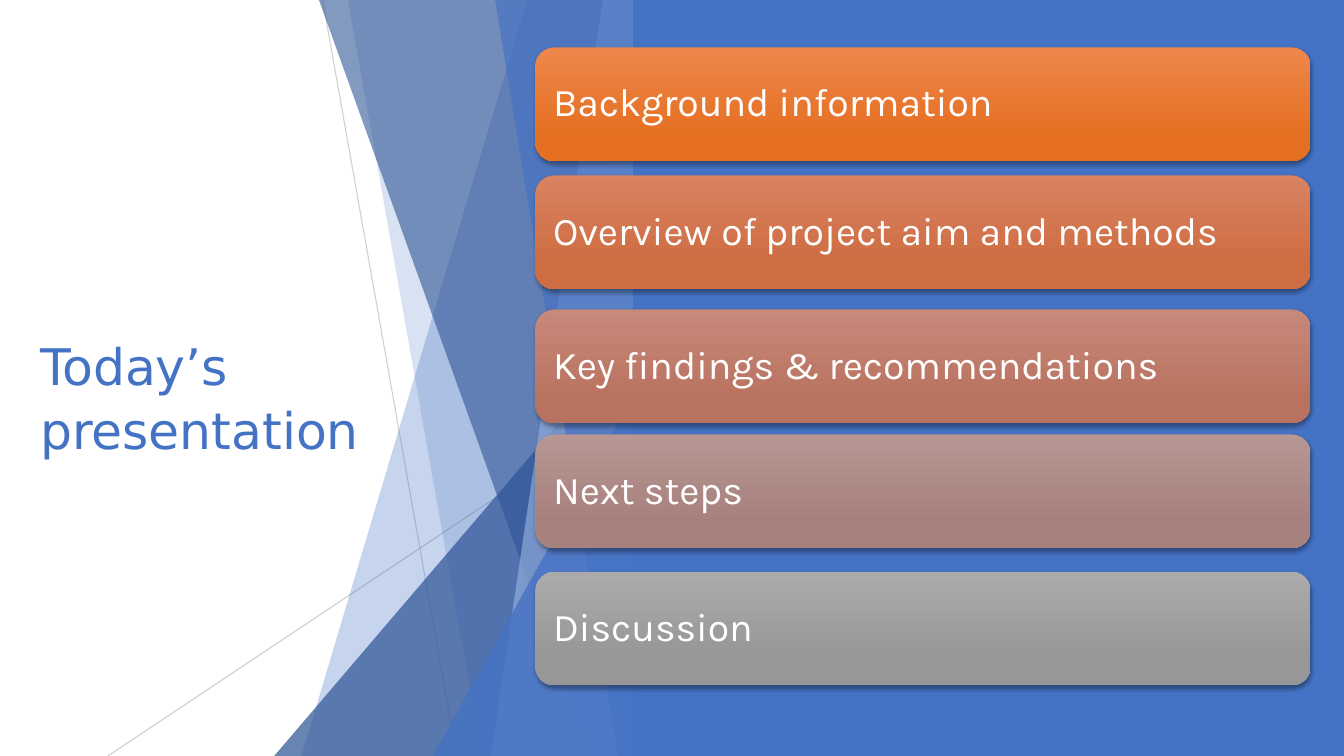
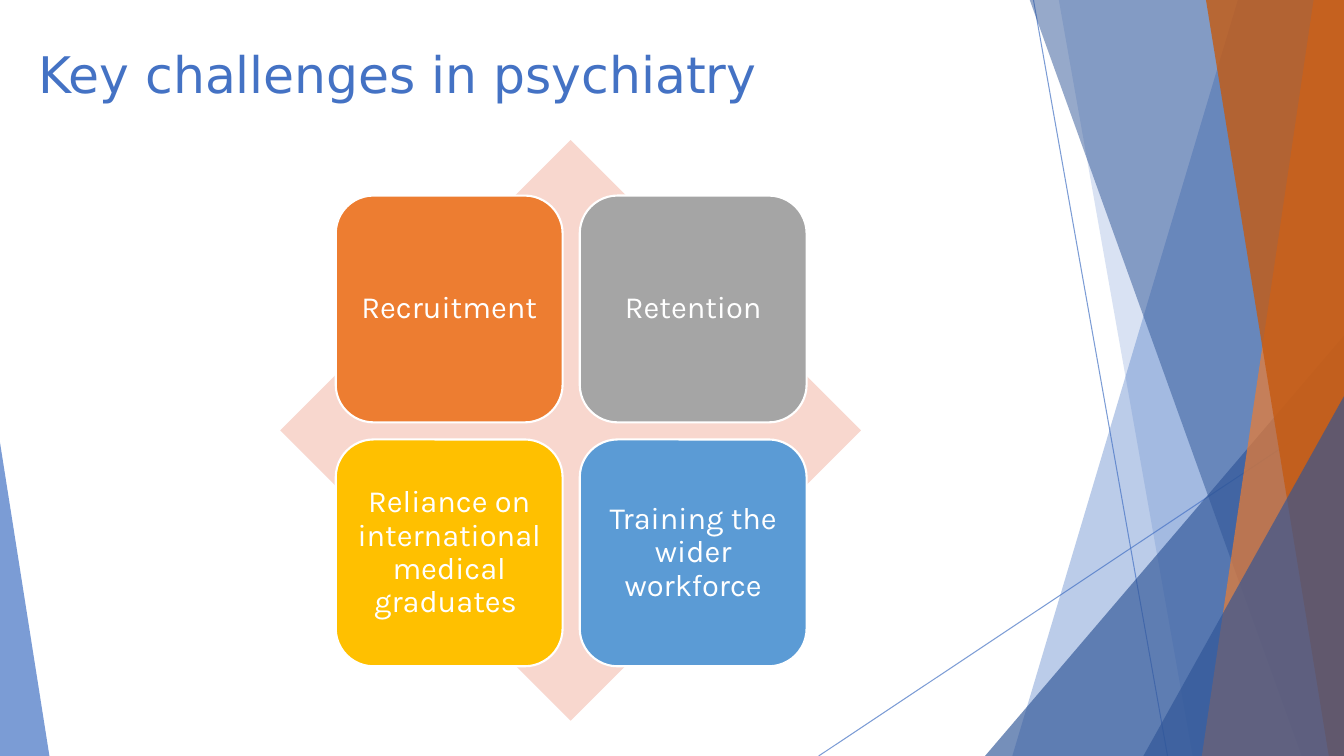
from lxml.etree import SubElement
from pptx import Presentation
from pptx.dml.color import RGBColor
from pptx.enum.shapes import MSO_CONNECTOR, MSO_SHAPE
from pptx.enum.text import MSO_ANCHOR, PP_ALIGN
from pptx.oxml.ns import qn
from pptx.util import Emu, Pt

PX = 9144
WIDTH, HEIGHT = 1333, 750
TITLE_FONT, BODY_FONT = "DejaVu Sans", "Karla"

COLORS = {
    "white": "FFFFFF", "blue": "4472C4", "navy": "2F5597", "pale_blue": "8FAADC",
    "orange": "ED7D31", "rust": "C55A11", "gray": "A5A5A5", "line_gray": "BFBFBF",
    "gold": "FFC000", "sky": "5B9BD5", "blush": "F8D7CE", "black": "000000",
    "bar1_top": "EE864C", "bar1_base": "E57021", "bar2_top": "D98362", "bar2_base": "CE6C42",
    "bar3_top": "C7897A", "bar3_base": "BA7260", "bar4_top": "B79693", "bar4_base": "A7817D",
    "bar5_top": "AAAAAA", "bar5_base": "979797",
}

FACET_LINES = [((1025, 0), (1158, 750)), ((1333, 403), (812, 750))]
FACETS = [
    ("ray", 1228, 1004), ("ray", 1050, 1183), ("peak", 977, 333), ("ray", 1021, 1291),
    ("ray", 1303, 1192), ("ray", 1196, 1318), ("peak", 1134, 393),
]
AGENDA_PAINT = {
    "lines": [("line_gray", 75), ("line_gray", 80)],
    "facets": [("blue", 30), ("blue", 20), ("navy", 72), ("navy", 60),
               ("pale_blue", 70), ("blue", 65), ("blue", 80)],
}
STANDARD_PAINT = {
    "lines": [("blue", 70), ("blue", 70)],
    "facets": [("blue", 36), ("blue", 20), ("navy", 66), ("navy", 50),
               ("orange", 70), ("rust", 80), ("navy", 66)],
}

AGENDA_TITLE = "Today’s presentation"
PANEL_LEFT = 628
AGENDA = [
    ("Background information", 47, "bar1"),
    ("Overview of project aim and methods", 174, "bar2"),
    ("Key findings & recommendations", 307, "bar3"),
    ("Next steps", 431, "bar4"),
    ("Discussion", 567, "bar5"),
]

CHALLENGES_TITLE = "Key challenges in psychiatry"
CHALLENGES = [
    ("Recruitment", "orange"),
    ("Retention", "gray"),
    ("Reliance on international medical graduates ", "gold"),
    ("Training the wider workforce", "sky"),
]
TILE_LEFT, TILE_TOP, TILE_SIZE, TILE_PITCH = 333, 194, 225, 242


def emu(*lengths):
    return [Emu(length * PX) for length in lengths]


def rgb(name):
    return RGBColor.from_string(COLORS[name])


def set_opacity(shape, percent):
    for color in shape.element.spPr.iter(qn("a:srgbClr")):
        SubElement(color, qn("a:alpha"), val=str(percent * 1000))


def paint(shape, color, opacity=100):
    shape.shadow.inherit = False
    shape.fill.solid()
    shape.fill.fore_color.rgb = rgb(color)
    shape.line.fill.background()
    if opacity < 100:
        set_opacity(shape, opacity)
    return shape


def add_block(slide, kind, box, color, opacity=100):
    return paint(slide.shapes.add_shape(kind, *emu(*box)), color, opacity)


def write(shape, text, *, size, font=BODY_FONT, color="white", inset=10, inset_top=None,
          spacing=0.9, align=PP_ALIGN.LEFT, anchor=MSO_ANCHOR.MIDDLE):
    frame = shape.text_frame
    frame.word_wrap = True
    frame.vertical_anchor = anchor
    frame.margin_left, frame.margin_right = emu(inset, inset)
    vertical = inset if inset_top is None else inset_top
    frame.margin_top, frame.margin_bottom = emu(vertical, vertical)
    paragraph = frame.paragraphs[0]
    paragraph.alignment = align
    paragraph.line_spacing = spacing
    run = paragraph.add_run()
    run.text = text
    run.font.size = Pt(size)
    run.font.name = font
    run.font.color.rgb = rgb(color)


def add_title(slide, text, box, anchor):
    write(slide.shapes.add_textbox(*emu(*box)), text, size=36, font=TITLE_FONT,
          color="blue", inset_top=5, spacing=1.05, anchor=anchor)


def add_triangle(slide, box, apex, color, opacity):
    triangle = add_block(slide, MSO_SHAPE.ISOSCELES_TRIANGLE, box, color, opacity)
    triangle.adjustments[0] = apex


def add_facets(slide, right, scheme):
    shift = right - WIDTH
    for (start, end), (color, opacity) in zip(FACET_LINES, scheme["lines"]):
        line = slide.shapes.add_connector(
            MSO_CONNECTOR.STRAIGHT,
            *emu(start[0] + shift, start[1], end[0] + shift, end[1]))
        line.line.width = Pt(0.75)
        line.line.color.rgb = rgb(color)
        set_opacity(line, opacity)
        SubElement(line.element.spPr, qn("a:effectLst"))
    for (kind, first, second), (color, opacity) in zip(FACETS, scheme["facets"]):
        left = first + shift
        if kind == "peak":
            box = (left, second, right - left, HEIGHT - second)
            add_triangle(slide, box, 1, color, opacity)
        else:
            outline = slide.shapes.build_freeform(left, -1, scale=PX)
            outline.add_line_segments(
                [(right, -1), (right, HEIGHT), (second + shift, HEIGHT)], close=True)
            paint(outline.convert_to_shape(), color, opacity)


def add_agenda_bar(slide, text, top, tone):
    bar = add_block(slide, MSO_SHAPE.ROUNDED_RECTANGLE, (531, top, 769, 113), "white")
    bar.fill.gradient()
    bar.fill.gradient_angle = 270
    stops = zip(bar.fill.gradient_stops, (0, 0.78), ("top", "base"))
    for stop, position, end in stops:
        stop.position = position
        stop.color.rgb = rgb(f"{tone}_{end}")
    effects = bar.element.spPr.find(qn("a:effectLst"))
    shadow = SubElement(effects, qn("a:outerShdw"), blurRad=str(Pt(3)), dist=str(Pt(2)),
                        dir="5400000", algn="ctr", rotWithShape="0")
    shade = SubElement(shadow, qn("a:srgbClr"), val=COLORS["black"])
    SubElement(shade, qn("a:alpha"), val="35000")
    write(bar, text, size=28, inset=12)


def build_agenda(slide):
    add_facets(slide, PANEL_LEFT, AGENDA_PAINT)
    add_title(slide, AGENDA_TITLE, (30, 308, 356, 169), MSO_ANCHOR.MIDDLE)
    add_block(slide, MSO_SHAPE.RECTANGLE, (PANEL_LEFT, 0, WIDTH - PANEL_LEFT, HEIGHT), "blue")
    for text, top, tone in AGENDA:
        add_agenda_bar(slide, text, top, tone)


def build_challenges(slide):
    add_facets(slide, WIDTH, STANDARD_PAINT)
    add_triangle(slide, (0, 439, 49, 311), 0, "blue", 70)
    add_block(slide, MSO_SHAPE.DIAMOND, (278, 139, 576, 576), "blush")
    for index, (text, color) in enumerate(CHALLENGES):
        row, column = divmod(index, 2)
        box = (TILE_LEFT + column * TILE_PITCH, TILE_TOP + row * TILE_PITCH,
               TILE_SIZE, TILE_SIZE)
        tile = add_block(slide, MSO_SHAPE.ROUNDED_RECTANGLE, box, color)
        tile.line.color.rgb = rgb("white")
        tile.line.width = Pt(1.5)
        write(tile, text, size=22, inset=9, align=PP_ALIGN.CENTER)
    add_title(slide, CHALLENGES_TITLE, (28, 35, 940, 144), MSO_ANCHOR.TOP)


def main():
    presentation = Presentation()
    presentation.slide_width, presentation.slide_height = emu(WIDTH, HEIGHT)
    for build in (build_agenda, build_challenges):
        build(presentation.slides.add_slide(presentation.slide_layouts[6]))
    presentation.save("out.pptx")


if __name__ == "__main__":
    main()
